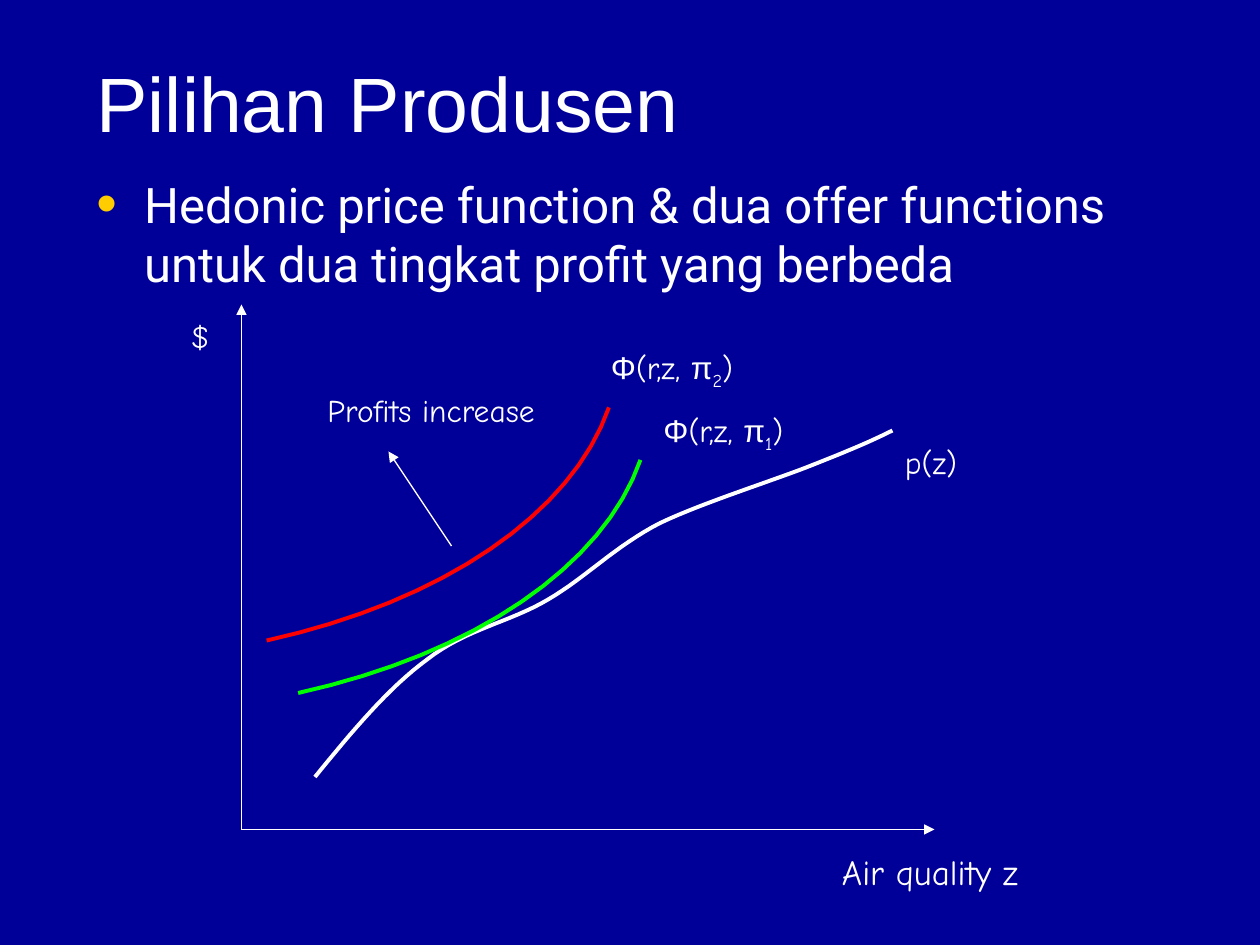
from lxml.etree import SubElement
from pptx import Presentation
from pptx.dml.color import RGBColor
from pptx.enum.shapes import MSO_CONNECTOR
from pptx.enum.text import MSO_ANCHOR, MSO_AUTO_SIZE, PP_ALIGN
from pptx.oxml.ns import qn
from pptx.util import Inches, Pt

NAVY = RGBColor(0x00, 0x00, 0x99)
WHITE = RGBColor(0xFF, 0xFF, 0xFF)
RED = RGBColor(0xFF, 0x00, 0x00)
GREEN = RGBColor(0x00, 0xFF, 0x00)
HEAD, BODY, HAND = "Arial", "Roboto", "Comic Neue"
TITLE_ONLY = 5
STEPS = 16

ORIGIN = (23, 79)
PRICE = [(30, 74), (33.5, 69.7), (37, 65.5), (40.7, 62.8),
         (44.4, 59.9), (48.5, 59.3), (52.2, 57.1),
         (55.8, 55), (58.6, 52), (62.9, 49.8),
         (67.1, 47.8), (73.9, 45.7), (77.6, 44.2),
         (81.4, 42.7), (83.2, 41.9), (85, 41)]
OFFER = [(61, 43.8), (57.5, 53.9), (45.2, 62.3), (28.4, 66)]
OFFER_SHIFT = (-3, -5)


def cell(n):
    return Inches(n / 12)


def bezier(points):
    curve = [points[0]]
    for i in range(0, len(points) - 1, 3):
        a, b, c, d = points[i:i + 4]
        for step in range(1, STEPS + 1):
            t = step / STEPS
            u = 1 - t
            curve.append(tuple(
                u**3 * a[k] + 3 * u * u * t * b[k] + 3 * u * t * t * c[k] + t**3 * d[k]
                for k in (0, 1)))
    return curve


class Deck:
    def __init__(self):
        self.prs = Presentation()
        self.prs.slide_width, self.prs.slide_height = cell(120), cell(90)

    def add_slide(self):
        self.s = self.prs.slides.add_slide(self.prs.slide_layouts[TITLE_ONLY])
        fill = self.s.background.fill
        fill.solid()
        fill.fore_color.rgb = NAVY

    def style(self, r, size, name):
        r.font.size, r.font.name = Pt(size), name
        r.font.color.rgb = WHITE

    def title(self, text, x, y, w, h):
        sp = self.s.shapes.title
        sp.left, sp.top, sp.width, sp.height = map(cell, (x, y, w, h))
        tf = sp.text_frame
        tf.text = text
        tf.vertical_anchor = MSO_ANCHOR.TOP
        tf.margin_top = Inches(0.11)
        p = tf.paragraphs[0]
        p.alignment = PP_ALIGN.LEFT
        self.style(p.runs[0], 44, HEAD)

    def textbox(self, x, y, w, h):
        return self.s.shapes.add_textbox(*map(cell, (x, y, w, h))).text_frame

    def bullet(self, text, x, y, w, h):
        tf = self.textbox(x, y, w, h)
        tf.word_wrap = True
        tf.text = text
        p = tf.paragraphs[0]
        pPr = p._p.get_or_add_pPr()
        pPr.set("marL", str(Inches(0.38)))
        pPr.set("indent", str(-Inches(0.38)))
        SubElement(SubElement(pPr, qn("a:buClr")), qn("a:srgbClr")).set("val", "FFCC00")
        SubElement(pPr, qn("a:buSzPct")).set("val", "120000")
        SubElement(pPr, qn("a:buFont")).set("typeface", HEAD)
        SubElement(pPr, qn("a:buChar")).set("char", "•")
        self.style(p.runs[0], 28, BODY)

    def label(self, parts, x, y, w, h=4.8, size=18):
        tf = self.textbox(x, y, w, h)
        tf.word_wrap = False
        tf.auto_size = MSO_AUTO_SIZE.SHAPE_TO_FIT_TEXT
        p = tf.paragraphs[0]
        for text, name, baseline in parts:
            r = p.add_run()
            r.text = text
            self.style(r, size, name)
            if baseline:
                r._r.get_or_add_rPr().set("baseline", str(baseline * 1000))

    def note(self, text, *box, **kw):
        self.label([(text, HAND, 0)], *box, **kw)

    def offer_label(self, level, *box):
        self.label([("Φ", HEAD, 0), ("(r,z, ", HAND, 0), ("π", HEAD, 0),
                    (level, HAND, -25), (")", HAND, 0)], *box)

    def arrow(self, start, end):
        sp = self.s.shapes.add_connector(MSO_CONNECTOR.STRAIGHT, *map(cell, start + end))
        sp.line.color.rgb = WHITE
        sp.line.width = Pt(0.75)
        SubElement(sp.line._get_or_add_ln(), qn("a:tailEnd")).set("type", "triangle")
        SubElement(sp._element.spPr, qn("a:effectLst"))

    def curve(self, points, color):
        pts = [(cell(x), cell(y)) for x, y in bezier(points)]
        builder = self.s.shapes.build_freeform(*pts[0])
        builder.add_line_segments(pts[1:], close=False)
        sp = builder.convert_to_shape()
        sp.shadow.inherit = False
        sp.fill.background()
        sp.line.color.rgb = color
        sp.line.width = Pt(2.25)


def main():
    d = Deck()
    d.add_slide()
    d.title("Pilihan Produsen", 8, 4, 102, 15)
    d.bullet("Hedonic price function & dua offer functions untuk dua tingkat "
             "profit yang berbeda", 8, 16, 101, 13)

    d.arrow(ORIGIN, (23, 29))
    d.arrow(ORIGIN, (89, 79))
    d.note("Air quality z", 79, 80.4, 21.5, 5.2, size=20)
    d.note("$", 17, 29.6, 4.6)

    d.curve(PRICE, WHITE)
    d.curve(OFFER, GREEN)
    dx, dy = OFFER_SHIFT
    d.curve([(x + dx, y + dy) for x, y in OFFER], RED)

    d.offer_label("2", 57, 32.6, 15.3)
    d.offer_label("1", 62, 38.6, 15.3)
    d.note("p(z)", 85, 41.6, 7.8)
    d.note("Profits increase", 30, 36.7, 24.8)
    d.arrow((43, 52), (37, 43))
    d.prs.save("out.pptx")


if __name__ == "__main__":
    main()
